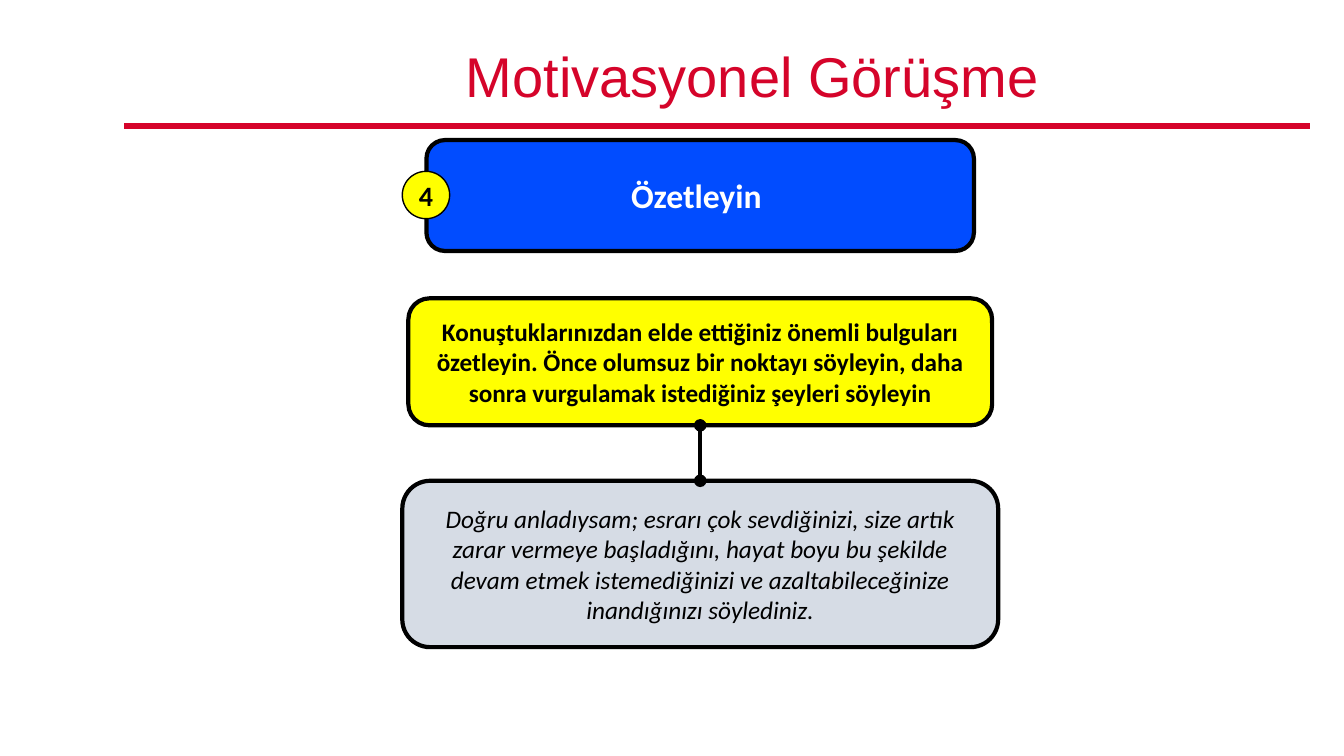
from dataclasses import dataclass

import pptx
import pptx.dml.color
import pptx.enum.shapes
import pptx.enum.text
import pptx.oxml
import pptx.oxml.ns
import pptx.util
from pptx.util import Inches

SHAPES = pptx.enum.shapes.MSO_SHAPE


@dataclass(frozen=True)
class Theme:
    """Colours, fonts and sizes of the slide."""
    red: str = "D5042A"
    blue: str = "014CFF"
    yellow: str = "FFFF00"
    grey: str = "D6DCE5"
    black: str = "000000"
    white: str = "FFFFFF"
    title_font: str = "Arial"
    body_font: str = "Calibri"
    title_size: int = 40
    step_size: int = 24
    number_size: int = 20
    body_size: int = 18
    rule_width: float = 4.5
    outline_width: float = 3
    badge_outline: float = 1


THEME = Theme()


@dataclass(frozen=True)
class Panel:
    """A filled shape with centred text."""
    text: str
    left: float
    top: float
    width: float
    height: float
    fill: str
    size: int
    color: str = THEME.black
    bold: bool = True
    italic: bool = False
    outline: float = THEME.outline_width
    preset: SHAPES = SHAPES.ROUNDED_RECTANGLE
    margin: float = 0.1


STEP = Panel("Özetleyin ", 4.23, 1.39, 5.43, 1.1, THEME.blue, THEME.step_size, THEME.white)
BADGE = Panel("4", 3.99, 1.7, 0.47, 0.47, THEME.yellow, THEME.number_size,
              outline=THEME.badge_outline, preset=SHAPES.OVAL, margin=0)
ADVICE = Panel("Konuştuklarınızdan elde ettiğiniz önemli bulguları özetleyin. Önce olumsuz bir "
               "noktayı söyleyin, daha sonra vurgulamak istediğiniz şeyleri söyleyin",
               4.05, 2.96, 5.79, 1.26, THEME.yellow, THEME.body_size)
EXAMPLE = Panel("Doğru anladıysam; esrarı çok sevdiğinizi, size artık zarar vermeye başladığını, "
                "hayat boyu bu şekilde devam etmek istemediğinizi ve azaltabileceğinize "
                "inandığınızı söylediniz.",
                3.99, 4.77, 5.91, 1.65, THEME.grey, THEME.body_size, bold=False, italic=True)


def rgb(value: str) -> pptx.dml.color.RGBColor:
    """Turn a hex string into a colour."""
    return pptx.dml.color.RGBColor.from_string(value)


def write_text(shape, text: str, font_name: str, size: int, color: str,
               bold: bool = False, italic: bool = False):
    """Write one centred paragraph and return it."""
    frame = shape.text_frame
    frame.word_wrap = True
    frame.vertical_anchor = pptx.enum.text.MSO_ANCHOR.MIDDLE
    paragraph = frame.paragraphs[0]
    paragraph.text = text
    paragraph.alignment = pptx.enum.text.PP_ALIGN.CENTER
    font = paragraph.font
    font.name, font.size = font_name, pptx.util.Pt(size)
    font.bold, font.italic = bold, italic
    font.color.rgb = rgb(color)
    return paragraph


def add_panel(slide: pptx.slide.Slide, panel: Panel):
    """Draw a panel and return its shape."""
    shape = slide.shapes.add_shape(panel.preset, Inches(panel.left), Inches(panel.top),
                                   Inches(panel.width), Inches(panel.height))
    shape.shadow.inherit = False
    shape.fill.solid()
    shape.fill.fore_color.rgb = rgb(panel.fill)
    shape.line.color.rgb = rgb(THEME.black)
    shape.line.width = pptx.util.Pt(panel.outline)
    shape.text_frame.margin_left = shape.text_frame.margin_right = Inches(panel.margin)
    write_text(shape, panel.text, THEME.body_font, panel.size, panel.color,
               panel.bold, panel.italic)
    return shape


def add_line(slide: pptx.slide.Slide, start: tuple[float, float], end: tuple[float, float],
             color: str, width: float):
    """Draw a straight line without shadow."""
    line = slide.shapes.add_connector(pptx.enum.shapes.MSO_CONNECTOR.STRAIGHT,
                                      *map(Inches, start + end))
    line.line.color.rgb = rgb(color)
    line.line.width = pptx.util.Pt(width)
    properties = line._element.spPr
    properties.append(properties.makeelement(pptx.oxml.ns.qn("a:effectLst"), {}))
    return line


def add_title(slide: pptx.slide.Slide, text: str) -> None:
    """Write the slide title."""
    title = slide.shapes.add_textbox(Inches(1.71), Inches(0.39), Inches(11.5), Inches(0.79))
    paragraph = write_text(title, text, THEME.title_font, THEME.title_size, THEME.red)
    paragraph.line_spacing = 0.9


def link_panels(slide: pptx.slide.Slide, upper, lower) -> None:
    """Join two stacked panels with a line that has round ends."""
    link = add_line(slide, (0, 0), (0, 0), THEME.black, THEME.outline_width)
    link.begin_connect(upper, 2)
    link.end_connect(lower, 0)
    outline = link.line._get_or_add_ln()
    for tag in ("a:headEnd", "a:tailEnd"):
        outline.append(outline.makeelement(pptx.oxml.ns.qn(tag), {"type": "oval"}))


def main() -> None:
    """Build and save the slide."""
    presentation = pptx.Presentation()
    presentation.slide_width = Inches(13.33)
    presentation.slide_height = Inches(7.5)
    slide = presentation.slides.add_slide(presentation.slide_layouts[6])
    add_line(slide, (1.23, 1.25), (12.99, 1.25), THEME.red, THEME.rule_width)
    example = add_panel(slide, EXAMPLE)
    advice = add_panel(slide, ADVICE)
    link_panels(slide, advice, example)
    add_panel(slide, STEP)
    add_panel(slide, BADGE)
    add_title(slide, "Motivasyonel Görüşme")
    presentation.save("out.pptx")


if __name__ == "__main__":
    main()
